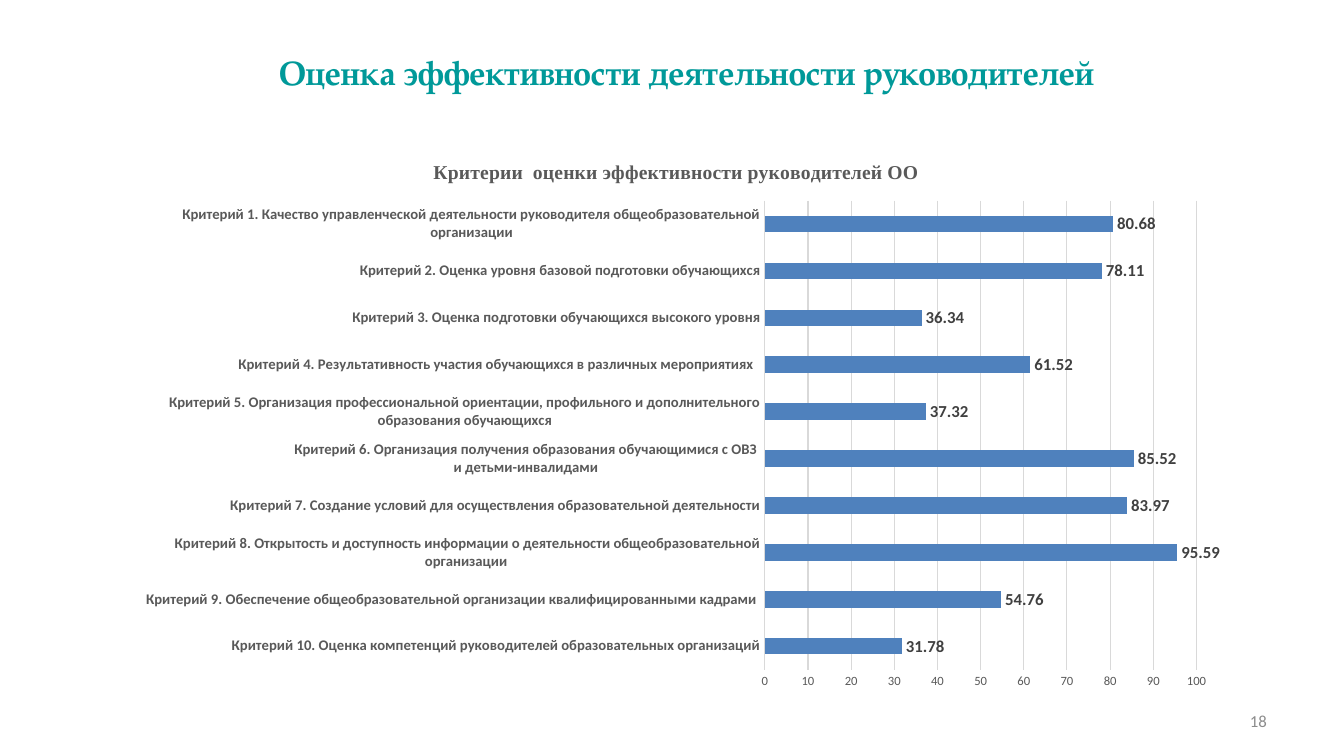
from lxml import etree
from pptx import Presentation
from pptx import util as u
from pptx.chart import data
from pptx.dml.color import RGBColor
from pptx.enum import chart as ch, text
from pptx.oxml import ns

HUES = {"teal": "009999", "bar": "4F81BD", "grid": "D9D9D9",
        "label": "595959", "value": "404040", "page": "8C8C8C"}

HEAD = "Критерии  оценки эффективности руководителей ОО"

# Listed from the bottom bar to the top one
SCORES = [
    ("Критерий 10. Оценка компетенций руководителей образовательных организаций", 31.78),
    ("Критерий 9. Обеспечение общеобразовательной организации квалифицированными кадрами ", 54.76),
    ("Критерий 8. Открытость и доступность информации о деятельности "
     "общеобразовательной организации ", 95.59),
    ("Критерий 7. Создание условий для осуществления образовательной деятельности", 83.97),
    ("Критерий 6. Организация получения образования обучающимися с ОВЗ \n"
     "и детьми-инвалидами ", 85.52),
    ("Критерий 5. Организация профессиональной ориентации, профильного и "
     "дополнительного образования обучающихся", 37.32),
    ("Критерий 4. Результативность участия обучающихся в различных мероприятиях  ", 61.52),
    ("Критерий 3. Оценка подготовки обучающихся высокого уровня", 36.34),
    ("Критерий 2. Оценка уровня базовой подготовки обучающихся", 78.11),
    ("Критерий 1. Качество управленческой деятельности руководителя "
     "общеобразовательной организации", 80.68),
]


def color(name):
    return RGBColor.from_string(HUES[name])


def style(font, size, hue, bold=False, face="Calibri"):
    font.size = u.Pt(size)
    font.bold = bold
    font.name = face
    font.color.rgb = color(hue)


def add_text(slide, box, words, align, *look):
    frame = slide.shapes.add_textbox(*map(u.Cm, box)).text_frame
    frame.word_wrap = True
    frame.vertical_anchor = text.MSO_ANCHOR.MIDDLE
    frame.text = words
    para = frame.paragraphs[0]
    para.alignment = align
    style(para.runs[0].font, *look)


def draw_line(line):
    line.color.rgb = color("grid")
    line.width = u.Pt(0.75)


def place_plot(chart, **sides):
    """Fix the inner plot area, in fractions of the chart."""
    plot = chart._chartSpace.chart.plotArea
    for old in plot.findall(ns.qn("c:layout")):
        plot.remove(old)
    layout = etree.Element(ns.qn("c:layout"))
    manual = etree.SubElement(layout, ns.qn("c:manualLayout"))
    parts = {"layoutTarget": "inner", "xMode": "edge", "yMode": "edge", **sides}
    for tag, val in parts.items():
        etree.SubElement(manual, ns.qn("c:" + tag)).set("val", str(val))
    plot.insert(0, layout)


def style_axes(chart):
    cats, vals = chart.category_axis, chart.value_axis
    for axis in (cats, vals):
        axis.major_tick_mark = axis.minor_tick_mark = ch.XL_TICK_MARK.NONE
    cats.has_major_gridlines = False
    draw_line(cats.format.line)
    style(cats.tick_labels.font, 10.5, "label", True)
    vals.minimum_scale, vals.maximum_scale, vals.major_unit = 0, 100, 10
    vals.has_major_gridlines = True
    draw_line(vals.major_gridlines.format.line)
    vals.format.line.fill.background()
    style(vals.tick_labels.font, 9, "label")


def style_bars(plot):
    plot.gap_width = 182
    plot.vary_by_categories = False
    fill = plot.series[0].format.fill
    fill.solid()
    fill.fore_color.rgb = color("bar")
    plot.has_data_labels = True
    labels = plot.data_labels
    labels.show_value = True
    labels.position = ch.XL_LABEL_POSITION.OUTSIDE_END
    style(labels.font, 12, "value", True)


def add_bars(slide, box):
    names, values = zip(*SCORES)
    table = data.CategoryChartData()
    table.categories = names
    table.add_series(HEAD, values)
    chart = slide.shapes.add_chart(
        ch.XL_CHART_TYPE.BAR_CLUSTERED, *map(u.Cm, box), table).chart
    chart.font.name = "Calibri"
    chart.font.size = u.Pt(10)
    chart.has_legend = False
    chart.has_title = True
    title = chart.chart_title.text_frame
    title.text = HEAD
    style(title.paragraphs[0].runs[0].font, 14, "label", True, "Times New Roman")
    chart.chart_title.include_in_layout = False
    style_axes(chart)
    style_bars(chart.plots[0])
    place_plot(chart, x=0.58, y=0.11, w=0.39, h=0.84)


def main():
    deck = Presentation()
    deck.slide_width, deck.slide_height = u.Cm(33.87), u.Cm(19.05)
    slide = deck.slides.add_slide(deck.slide_layouts[6])
    add_text(slide, (24.28, 17.65, 7.9, 1.02), "18",
             text.PP_ALIGN.RIGHT, 12, "page")
    add_text(slide, (6.78, 1.19, 23.98, 1.27),
             "Оценка эффективности деятельности руководителей",
             text.PP_ALIGN.LEFT, 24, "teal", True, "TeX Gyre Pagella")
    add_bars(slide, (3.1, 3.51, 27.89, 14.07))
    deck.save("out.pptx")


if __name__ == "__main__":
    main()
